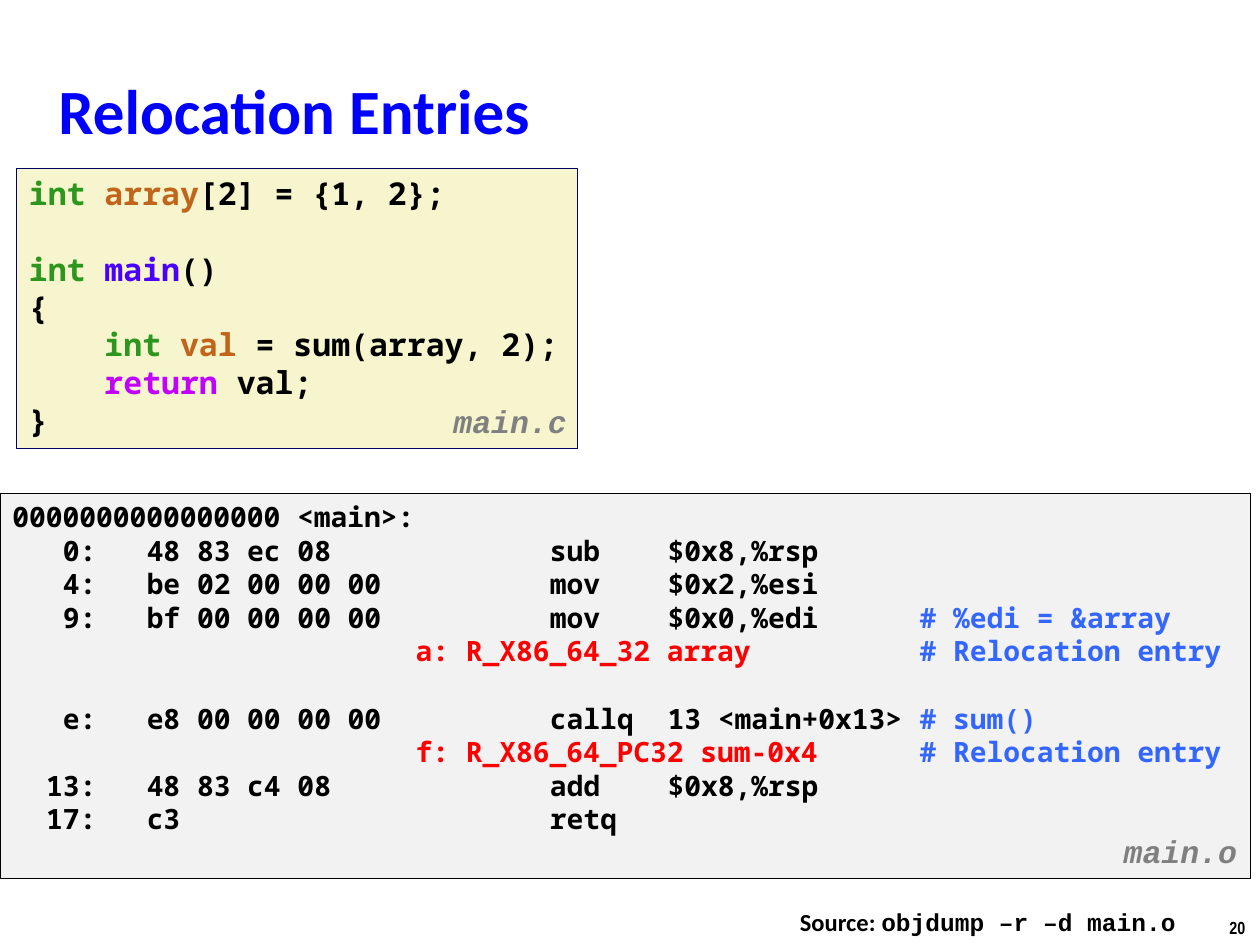
from pptx import Presentation
from pptx.dml.color import RGBColor
from pptx.enum.shapes import MSO_SHAPE
from pptx.enum.text import MSO_ANCHOR, MSO_AUTO_SIZE, PP_ALIGN
from pptx.oxml.ns import qn
from pptx.util import Pt
from lxml.etree import SubElement

BLACK = RGBColor(0x00, 0x00, 0x00)
BLUE = RGBColor(0x00, 0x00, 0xFF)
NAVY = RGBColor(0x00, 0x00, 0x66)
GRAY = RGBColor(0x80, 0x80, 0x80)
LIGHT_GRAY = RGBColor(0xF2, 0xF2, 0xF2)
CREAM = RGBColor(0xF7, 0xF5, 0xCD)
RED = RGBColor(0xFF, 0x00, 0x00)
COMMENT = RGBColor(0x33, 0x66, 0xFF)
TYPE = RGBColor(0x2D, 0x96, 0x1E)
VARIABLE = RGBColor(0xC1, 0x65, 0x1C)
FUNCTION = RGBColor(0x4A, 0x00, 0xFF)
KEYWORD = RGBColor(0xC2, 0x00, 0xFF)

CODE_FONT, LABEL_FONT, TEXT_FONT = "Noto Sans Mono", "Courier New", "Calibri"
CHAR_WIDTH = 0.6   # advance of one code character, in ems
LINE_HEIGHT = 1.2  # height of one code line, in ems

# Tab stops of the listing, in characters
INSTRUCTION_TABS = ((5, "r"), (8, "l"), (32, "l"), (39, "l"), (54, "l"))
RELOCATION_TABS = ((24, "l"), (54, "l"))


class CodeLine:
    """Coloured spans, with indent and tab stops counted in characters."""

    def __init__(self, *spans, indent=0, tabs=(), gap=False):
        self.spans, self.indent, self.tabs, self.gap = spans, indent, tabs, gap


def instruction(address, code, operation, operand="", comment="", gap=False):
    cells = [address + ":", code, operation] + ([operand] if operand else [])
    spans = [("".join("\t" + cell for cell in cells), BLACK)]
    if comment:
        spans.append(("\t" + comment, COMMENT))
    return CodeLine(*spans, tabs=INSTRUCTION_TABS, gap=gap)


def relocation(entry):
    return CodeLine(("\t" + entry, RED), ("\t# Relocation entry", COMMENT),
                    tabs=RELOCATION_TABS)


SOURCE_CODE = (
    CodeLine(("int ", TYPE), ("array", VARIABLE), ("[2] = {1, 2};", BLACK)),
    CodeLine(("int ", TYPE), ("main", FUNCTION), ("()", BLACK), gap=True),
    CodeLine(("{", BLACK)),
    CodeLine(("int ", TYPE), ("val", VARIABLE), (" = sum(array, 2);", BLACK), indent=4),
    CodeLine(("return", KEYWORD), (" val;", BLACK), indent=4),
    CodeLine(("}", BLACK)),
)

OBJECT_CODE = (
    CodeLine(("0000000000000000 <main>:", BLACK)),
    instruction("0", "48 83 ec 08", "sub", "$0x8,%rsp"),
    instruction("4", "be 02 00 00 00", "mov", "$0x2,%esi"),
    instruction("9", "bf 00 00 00 00", "mov", "$0x0,%edi", "# %edi = &array"),
    relocation("a: R_X86_64_32 array"),
    instruction("e", "e8 00 00 00 00", "callq", "13 <main+0x13>", "# sum()", gap=True),
    relocation("f: R_X86_64_PC32 sum-0x4"),
    instruction("13", "48 83 c4 08", "add", "$0x8,%rsp"),
    instruction("17", "c3", "retq"),
)


class SlideWriter:
    def __init__(self, page):
        self.page = page

    def style(self, font, name, size, color=None, italic=None):
        font.name, font.size, font.bold, font.italic = name, Pt(size), True, italic
        if color is not None:
            font.color.rgb = color

    def title(self, text, left, top, width, height):
        box = self.page.shapes.title
        box.left, box.top, box.width, box.height = map(Pt, (left, top, width, height))
        frame = box.text_frame
        frame.auto_size = MSO_AUTO_SIZE.NONE
        frame.vertical_anchor = MSO_ANCHOR.MIDDLE
        para = frame.paragraphs[0]
        para.text, para.alignment, para.line_spacing = text, PP_ALIGN.LEFT, 0.82
        self.style(para.font, TEXT_FONT, 36, BLUE)

    def label(self, spans, left, top, width, height, size,
              color=BLACK, italic=None, line_spacing=None):
        """Add one line of text from (text, font name) spans."""
        box = self.page.shapes.add_textbox(Pt(left), Pt(top), Pt(width), Pt(height))
        box.text_frame.word_wrap = False
        para = box.text_frame.paragraphs[0]
        para.line_spacing = line_spacing
        for text, name in spans:
            span = para.add_run()
            span.text = text
            self.style(span.font, name, size, color, italic)

    def file_name(self, text, left, top):
        self.label([(text, LABEL_FONT)], left, top, 84, 28, 18, GRAY, True, 0.94)

    def code_box(self, lines, left, top, width, height, size, fill, line_color):
        box = self.page.shapes.add_shape(
            MSO_SHAPE.RECTANGLE, Pt(left), Pt(top), Pt(width), Pt(height))
        box.shadow.inherit = False
        box.fill.solid()
        box.fill.fore_color.rgb = fill
        box.line.color.rgb = line_color
        box.line.width = Pt(0.25)
        frame = box.text_frame
        frame.word_wrap = False
        frame.vertical_anchor = MSO_ANCHOR.TOP
        for number, line in enumerate(lines):
            para = frame.add_paragraph() if number else frame.paragraphs[0]
            self.code_line(para, line, size)

    def code_line(self, para, line, size):
        para.alignment = PP_ALIGN.LEFT
        if line.gap:
            para.space_before = Pt(size * LINE_HEIGHT)
        column = size * CHAR_WIDTH
        properties = para._p.get_or_add_pPr()
        if line.indent:
            properties.set("marL", str(Pt(line.indent * column)))
        if line.tabs:
            stops = SubElement(properties, qn("a:tabLst"))
            for place, side in line.tabs:
                SubElement(stops, qn("a:tab"), pos=str(Pt(place * column)), algn=side)
        self.style(para.font, CODE_FONT, size)
        for text, color in line.spans:
            span = para.add_run()
            span.text = text
            span.font.color.rgb = color


def main():
    deck = Presentation()
    deck.slide_width, deck.slide_height = Pt(720), Pt(540)
    writer = SlideWriter(deck.slides.add_slide(deck.slide_layouts[5]))
    writer.title("Relocation Entries", 26.2, 35, 686, 62)
    writer.label([("20", "Arial Narrow")], 695.5, 520.5, 24.5, 19.5, 10)
    writer.label([("Source: ", TEXT_FONT), ("objdump –r –d main.o", LABEL_FONT)],
                 450, 515.5, 231, 24.5, 14, line_spacing=0.98)
    writer.code_box(OBJECT_CODE, 0, 282, 714.7, 220, 16, LIGHT_GRAY, BLACK)
    writer.file_name("main.o", 635, 473.5)
    writer.code_box(SOURCE_CODE, 9.4, 96, 320.4, 160, 18, CREAM, NAVY)
    writer.file_name("main.c", 252, 228)
    deck.save("out.pptx")


if __name__ == "__main__":
    main()
